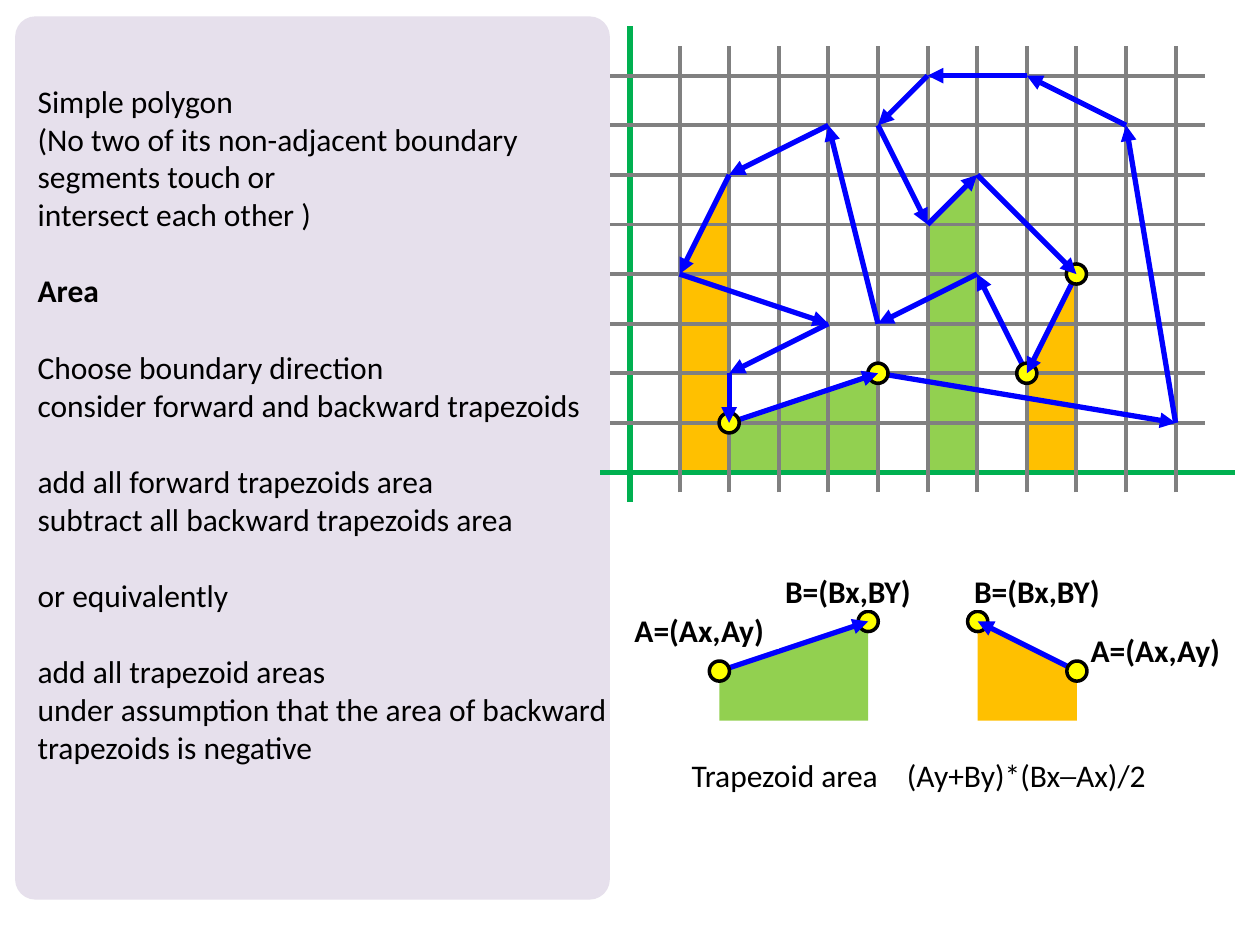
from lxml import etree
from pptx import Presentation
from pptx.dml.color import RGBColor
from pptx.enum.shapes import MSO_CONNECTOR, MSO_SHAPE
from pptx.enum.text import MSO_ANCHOR, PP_ALIGN
from pptx.oxml.ns import qn
from pptx.util import Inches, Pt

STRAIGHT = MSO_CONNECTOR.STRAIGHT
OVAL, RECTANGLE, ROUNDED = MSO_SHAPE.OVAL, MSO_SHAPE.RECTANGLE, MSO_SHAPE.ROUNDED_RECTANGLE
MIDDLE, CENTER = MSO_ANCHOR.MIDDLE, PP_ALIGN.CENTER

COLORS = {
    "panel": "E6E0EC", "forward": "92D050", "backward": "FFC000",
    "grid": "808080", "axis": "00B050", "edge": "0000FF",
    "dot": "FFFF00", "outline": "000000", "text": "000000", "label": "FFFFFF",
}
RGB = {name: RGBColor.from_string(value) for name, value in COLORS.items()}
FONT = {"name": "Calibri", "size": Pt(18)}
LABEL_FRAME = {
    "margin_left": 0, "margin_right": 0, "margin_top": 0, "margin_bottom": 0,
    "vertical_anchor": MIDDLE, "word_wrap": True,
}

# Figures use grid units of one centimetre, with y upwards from an origin.
UNIT = Inches(1 / 2.54)
GRID_ORIGIN = (Inches(5), Inches(3.75))
LEFT_ORIGIN = (Inches(5.71), Inches(5.72))
RIGHT_ORIGIN = (Inches(7.76), Inches(5.72))
COLUMNS, ROWS = 11, 8
DOT_SIZE = Inches(0.16)

POLYGON = [
    (11, 1), (10, 7), (8, 8), (6, 8), (5, 7), (6, 5), (7, 6), (9, 4), (8, 2),
    (7, 4), (5, 3), (4, 7), (2, 6), (1, 4), (4, 3), (2, 2), (2, 1), (5, 2),
]
MARKED = {(2, 1), (5, 2), (8, 2), (9, 4)}
TRAPEZOIDS = [
    (GRID_ORIGIN, (9, 4), (8, 2), "backward"),
    (GRID_ORIGIN, (6, 5), (7, 6), "forward"),
    (GRID_ORIGIN, (2, 1), (5, 2), "forward"),
    (GRID_ORIGIN, (2, 6), (1, 4), "backward"),
    (LEFT_ORIGIN, (0, 1), (3, 2), "forward"),
    (RIGHT_ORIGIN, (2, 1), (0, 2), "backward"),
]
# Origin, A, B, then left and top of the labels of A and B
EXAMPLES = [
    (LEFT_ORIGIN, (0, 1), (3, 2), (4.92, 4.85), (6.1, 4.54)),
    (RIGHT_ORIGIN, (2, 1), (0, 2), (8.54, 5.01), (7.6, 4.54)),
]
TEXT_BLOCKS = [
    ["Simple polygon",
     "(No two of its non-adjacent boundary segments touch or",
     "intersect each other )"],
    ["Area"],
    ["Choose boundary direction", "consider forward and backward trapezoids"],
    ["add all forward trapezoids area", "subtract all backward trapezoids area"],
    ["or equivalently"],
    ["add all trapezoid areas",
     "under assumption that the area of backward trapezoids is negative"],
]

presentation = Presentation()
presentation.slide_width, presentation.slide_height = Inches(10), Inches(7.5)
slide = presentation.slides.add_slide(presentation.slide_layouts[6])
shapes = slide.shapes


def add_line(origin, start, end, color, width, arrow=False):
    """Join two grid points, with an arrowhead at the end if asked."""
    x, y = origin
    line = shapes.add_connector(
        STRAIGHT,
        round(x + start[0] * UNIT), round(y - start[1] * UNIT),
        round(x + end[0] * UNIT), round(y - end[1] * UNIT))
    line.line.color.rgb = RGB[color]
    line.line.width = Pt(width)
    if arrow:
        etree.SubElement(line.line._get_or_add_ln(), qn("a:tailEnd"), type="triangle")
    etree.SubElement(line._element.spPr, qn("a:effectLst"))


def add_dot(origin, point):
    """Mark a grid point with an outlined dot centred on it."""
    dot = shapes.add_shape(
        OVAL,
        origin[0] + point[0] * UNIT - DOT_SIZE // 2,
        origin[1] - point[1] * UNIT - DOT_SIZE // 2, DOT_SIZE, DOT_SIZE)
    dot.shadow.inherit = False
    dot.fill.solid()
    dot.fill.fore_color.rgb = RGB["dot"]
    dot.line.color.rgb = RGB["outline"]
    dot.line.width = Pt(2)


# Panel and trapezoids
panel = shapes.add_shape(ROUNDED, Inches(0.12), Inches(0.13), Inches(4.72), Inches(7.01))
panel.adjustments[0] = 0.034
filled_shapes = [(panel, "panel")]
for origin, (ax, ay), (bx, by), color in TRAPEZOIDS:
    builder = shapes.build_freeform(ax, 0, scale=UNIT)
    builder.add_line_segments([(ax, -ay), (bx, -by), (bx, 0)])
    filled_shapes.append((builder.convert_to_shape(*origin), color))

# Axes and grid
add_line(GRID_ORIGIN, (-0.6, 0), (12.2, 0), "axis", 3)
add_line(GRID_ORIGIN, (0, -0.6), (0, 9), "axis", 3)
for column in range(1, COLUMNS + 1):
    add_line(GRID_ORIGIN, (column, -0.4), (column, ROWS + 0.6), "grid", 2.25)
for row in range(1, ROWS + 1):
    add_line(GRID_ORIGIN, (-0.4, row), (COLUMNS + 0.6, row), "grid", 2.25)

# Explanation
explanation = shapes.add_textbox(Inches(0.2), Inches(0.6), Inches(4.72), Inches(5.86))
frame = explanation.text_frame
frame.word_wrap = True
paragraph = frame.paragraphs[0]
for block_number, block in enumerate(TEXT_BLOCKS):
    for line_number, text in enumerate(block):
        if block_number or line_number:
            paragraph = frame.add_paragraph()
        paragraph.add_run().text = text
        paragraph.runs[0].font.bold = text == "Area"
        if block_number and not line_number:
            paragraph.space_before = Pt(22)

# Polygon, drawn backwards so that each arrowhead lies over the dot it reaches
edges = list(zip(POLYGON, POLYGON[1:] + POLYGON[:1]))
for start, end in reversed(edges):
    add_line(GRID_ORIGIN, start, end, "edge", 3, arrow=True)
    if start in MARKED:
        add_dot(GRID_ORIGIN, start)

# Forward and backward examples
for origin, a, b, a_label, b_label in EXAMPLES:
    add_dot(origin, b)
    add_line(origin, a, b, "edge", 3, arrow=True)
    for text, (left, top) in (("A=(Ax,Ay)", a_label), ("B=(Bx,BY)", b_label)):
        label = shapes.add_shape(
            RECTANGLE, Inches(left), Inches(top), Inches(1.26), Inches(0.3))
        filled_shapes.append((label, "label"))
        for name, value in LABEL_FRAME.items():
            setattr(label.text_frame, name, value)
        paragraph = label.text_frame.paragraphs[0]
        paragraph.alignment = CENTER
        paragraph.add_run().text = text
        paragraph.runs[0].font.bold = True
    add_dot(origin, a)

# Formula, set off from its caption by a tab stop
formula = shapes.add_textbox(Inches(5.39), Inches(5.95), Inches(3.94), Inches(0.71))
formula.text_frame.word_wrap = True
paragraph = formula.text_frame.paragraphs[0]
paragraph.add_run().text = "Trapezoid area\t(Ay+By)*(Bx─Ax)/2"
tab_list = etree.SubElement(paragraph._p.get_or_add_pPr(), qn("a:tabLst"))
etree.SubElement(tab_list, qn("a:tab"), pos=str(Inches(1.71)), algn="l")

for shape, color in filled_shapes:
    shape.shadow.inherit = False
    shape.fill.solid()
    shape.fill.fore_color.rgb = RGB[color]
    shape.line.fill.background()

for shape in shapes:
    if shape.has_text_frame:
        for paragraph in shape.text_frame.paragraphs:
            for run in paragraph.runs:
                run.font.color.rgb = RGB["text"]
                for name, value in FONT.items():
                    setattr(run.font, name, value)

presentation.save("out.pptx")
